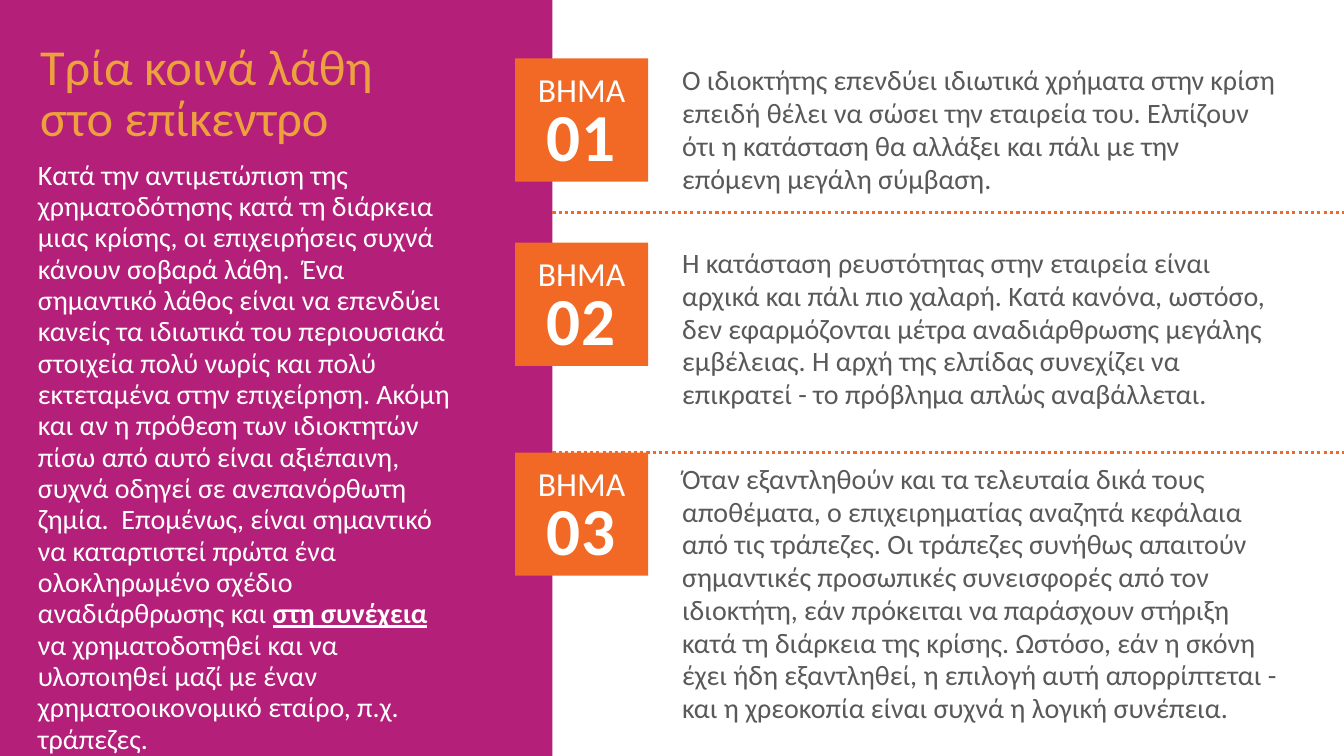
from pptx import Presentation
from pptx.dml.color import RGBColor
from pptx.enum import dml, shapes, text
from pptx.util import Pt

MAGENTA = RGBColor(0xB4, 0x1F, 0x7A)
ORANGE = RGBColor(0xF1, 0x69, 0x24)
GOLD = RGBColor(0xED, 0xA1, 0x3E)
GREY = RGBColor(0x59, 0x59, 0x59)
WHITE = RGBColor(0xFF, 0xFF, 0xFF)

WIDTH, HEIGHT = 960, 540
PANEL_W = 394.6
BADGE_X, BADGE_W, BADGE_H = 368, 95, 88
BADGE_TOPS = (41.8, 173.4, 323.3)
DIVIDERS = (151.9, 323.3)

TITLE = "Τρία κοινά λάθη στο επίκεντρο"
INTRO = (
    ("Κατά την αντιμετώπιση της χρηματοδότησης κατά τη διάρκεια μιας κρίσης, "
     "οι επιχειρήσεις συχνά κάνουν σοβαρά λάθη.  Ένα σημαντικό λάθος είναι να "
     "επενδύει κανείς τα ιδιωτικά του περιουσιακά στοιχεία πολύ νωρίς και πολύ "
     "εκτεταμένα στην επιχείρηση. Ακόμη και αν η πρόθεση των ιδιοκτητών πίσω από "
     "αυτό είναι αξιέπαινη, συχνά οδηγεί σε ανεπανόρθωτη ζημία.  Επομένως, είναι "
     "σημαντικό να καταρτιστεί πρώτα ένα ολοκληρωμένο σχέδιο αναδιάρθρωσης και ", False),
    ("στη συνέχεια ", True),
    ("να χρηματοδοτηθεί και να υλοποιηθεί μαζί με έναν χρηματοοικονομικό εταίρο, "
     "π.χ. τράπεζες.", False),
)
STEPS = (
    "Ο ιδιοκτήτης επενδύει ιδιωτικά χρήματα στην κρίση επειδή θέλει να σώσει την "
    "εταιρεία του. Ελπίζουν ότι η κατάσταση θα αλλάξει και πάλι με την επόμενη "
    "μεγάλη σύμβαση.",
    "Η κατάσταση ρευστότητας στην εταιρεία είναι αρχικά και πάλι πιο χαλαρή. Κατά "
    "κανόνα, ωστόσο, δεν εφαρμόζονται μέτρα αναδιάρθρωσης μεγάλης εμβέλειας. Η αρχή "
    "της ελπίδας συνεχίζει να επικρατεί - το πρόβλημα απλώς αναβάλλεται.",
    "Όταν εξαντληθούν και τα τελευταία δικά τους αποθέματα, ο επιχειρηματίας αναζητά "
    "κεφάλαια από τις τράπεζες. Οι τράπεζες συνήθως απαιτούν σημαντικές προσωπικές "
    "συνεισφορές από τον ιδιοκτήτη, εάν πρόκειται να παράσχουν στήριξη κατά τη "
    "διάρκεια της κρίσης. Ωστόσο, εάν η σκόνη έχει ήδη εξαντληθεί, η επιλογή αυτή "
    "απορρίπτεται - και η χρεοκοπία είναι συχνά η λογική συνέπεια.",
)


def add_block(s, x, y, w, h, color):
    """Add a plain filled rectangle."""
    sp = s.shapes.add_shape(shapes.MSO_SHAPE.RECTANGLE, Pt(x), Pt(y), Pt(w), Pt(h))
    sp.shadow.inherit = False
    sp.fill.solid()
    sp.fill.fore_color.rgb = color
    sp.line.fill.background()


def add_text(s, x, y, w, h, paragraphs, size, color, leading=None, gap=0, align=None):
    """Add a wrapped text box; each paragraph is a sequence of (text, emphasis) runs."""
    tf = s.shapes.add_textbox(Pt(x), Pt(y), Pt(w), Pt(h)).text_frame
    tf.word_wrap = True
    for i, runs in enumerate(paragraphs):
        p = tf.add_paragraph() if i else tf.paragraphs[0]
        p.alignment = align
        if leading:
            p.line_spacing = Pt(leading)
        if i:
            p.space_before = Pt(gap)
        p.font.name = "Calibri"
        p.font.size = Pt(size)
        p.font.color.rgb = color
        for content, emphasis in runs:
            r = p.add_run()
            r.text = content
            if emphasis:
                r.font.bold = r.font.underline = True
    return tf


def add_panel(s, x, y, w, h):
    """Place the coloured panel with its title and introduction."""
    add_block(s, x, y, w, h, MAGENTA)
    add_text(s, x + 21.6, y + 28.8, 306.7, 80, [[(TITLE, False)]], 36, GOLD, 36.2)
    add_text(s, x + 20, y + 110.2, 315, h - 111.6, [INTRO], 20, WHITE, 22.4)


def add_badge(s, x, y, w, h, number):
    """Place a step badge with its label above its number."""
    add_block(s, x, y, w, h, ORANGE)
    center = text.PP_ALIGN.CENTER
    add_text(s, x + 7, y + 4, w - 14, 36, [[("ΒΗΜΑ", False)]], 24, WHITE, align=center)
    tf = add_text(s, x + 13.7, y + 25.2, w - 28, 58.3, [[(f"{number:02}", False)]],
                  48, WHITE, align=center)
    tf.margin_left = tf.margin_right = tf.margin_top = tf.margin_bottom = 0
    tf.vertical_anchor = text.MSO_ANCHOR.MIDDLE
    p = tf.paragraphs[0]
    p.font.bold = True
    p.runs[0]._r.get_or_add_rPr().set("spc", "110")


def add_divider(s, x, y, w):
    """Place a dotted horizontal rule."""
    cx = s.shapes.add_connector(shapes.MSO_CONNECTOR.STRAIGHT, Pt(x), Pt(y), Pt(x + w), Pt(y))
    cx.line.color.rgb = ORANGE
    cx.line.width = Pt(2.25)
    cx.line.dash_style = dml.MSO_LINE.ROUND_DOT
    cx._element.spPr.makeelement
    effects = cx._element.spPr.makeelement(
        "{http://schemas.openxmlformats.org/drawingml/2006/main}effectLst", {})
    cx._element.spPr.append(effects)


def add_steps(s, x, y, w, h):
    """Place the three step descriptions, dividers and badges."""
    add_text(s, x + 85.6, y + 41.8, 439.2, h - 45, [[(step, False)] for step in STEPS],
             20, GREY, 23.4, 37)
    for top in DIVIDERS:
        add_divider(s, x, y + top, w)
    for number, top in enumerate(BADGE_TOPS, 1):
        add_badge(s, BADGE_X, y + top, BADGE_W, BADGE_H, number)


def main():
    """Build and save the slide."""
    prs = Presentation()
    prs.slide_width, prs.slide_height = Pt(WIDTH), Pt(HEIGHT)
    s = prs.slides.add_slide(prs.slide_layouts[6])
    add_panel(s, 0, 0, PANEL_W, HEIGHT)
    add_steps(s, PANEL_W, 0, WIDTH - PANEL_W, HEIGHT)
    prs.save("out.pptx")


if __name__ == "__main__":
    main()
